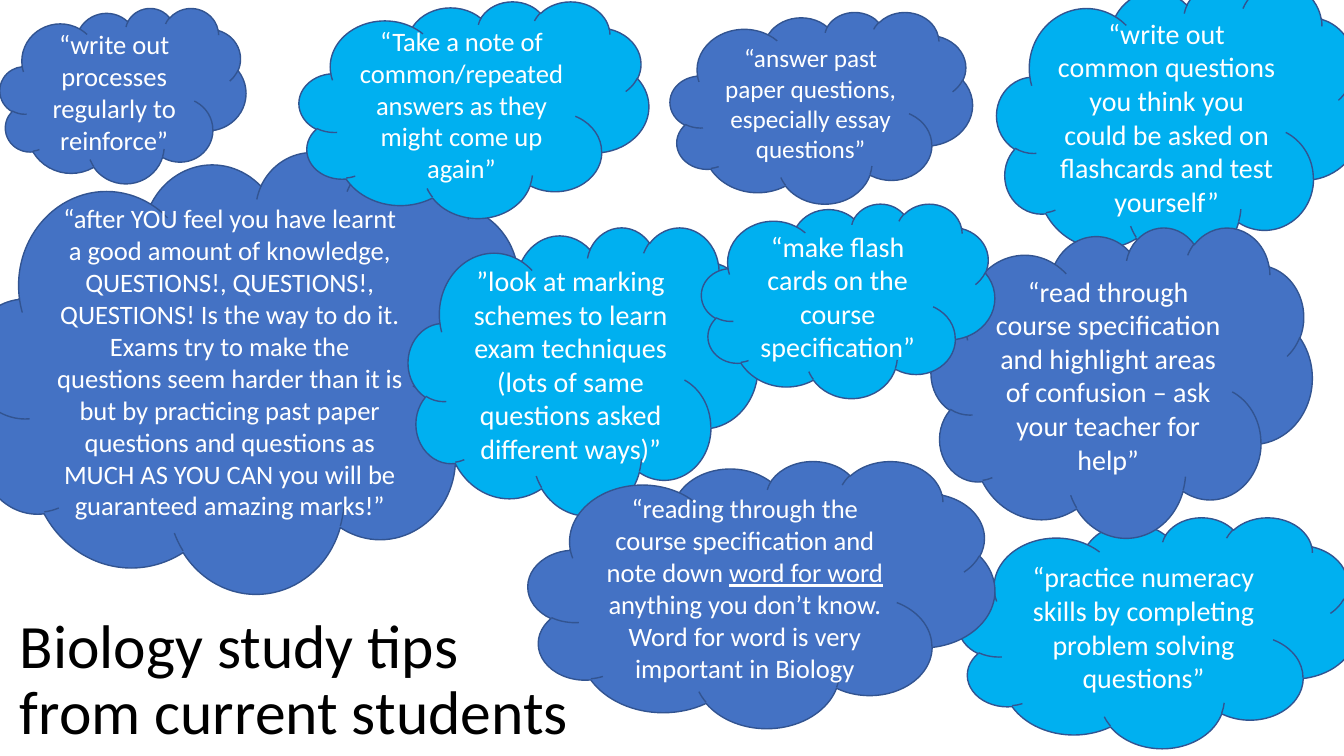
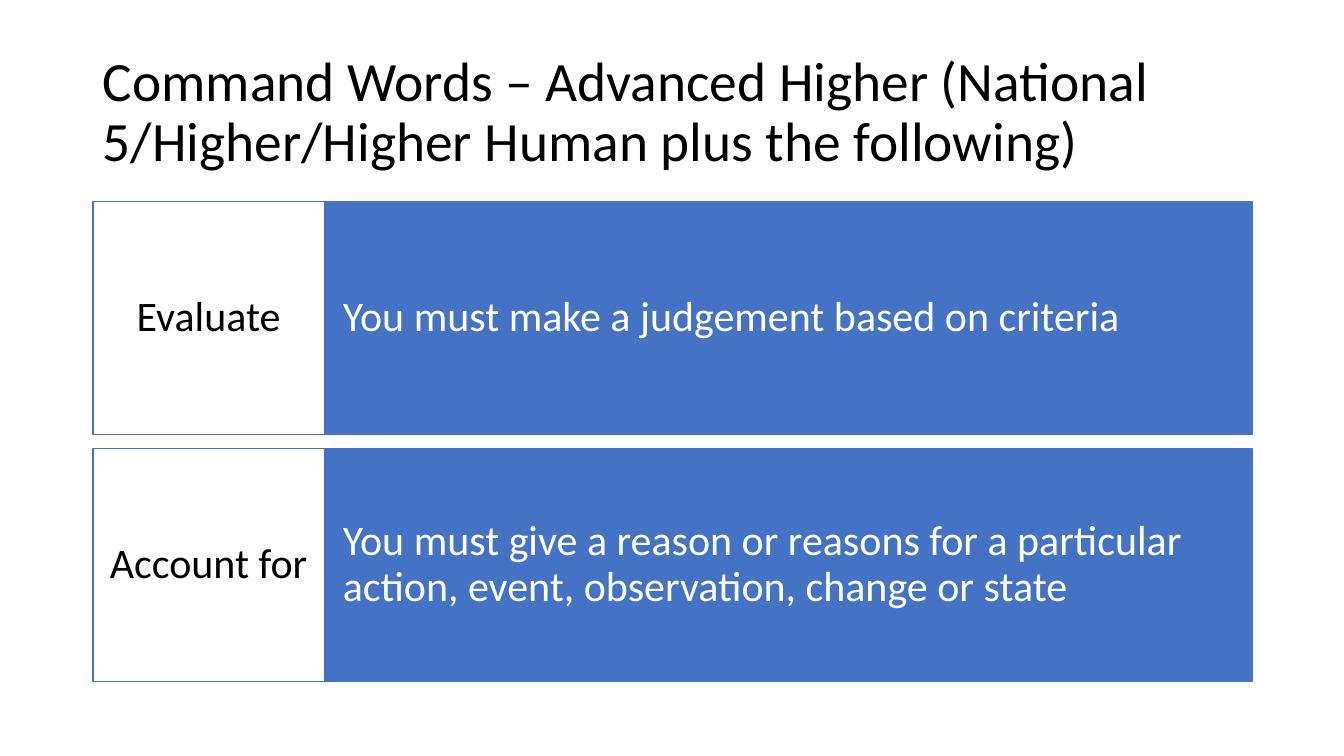
from pptx import Presentation
from pptx import util as u
from pptx.dml.color import RGBColor
from pptx.enum import shapes, text

Cm = u.Cm
FONT = "Calibri"
WHITE, BLACK = "FFFFFF", "000000"
BLUE, SKY, OUTLINE = "4472C4", "00B0F0", "325491"
TITLE_ONLY = 5

STUDY_TIPS = [
    ("“practice numeracy skills by completing problem solving questions”",
     (24.16, 13.03, 10.03, 5.82), SKY, 20),
    ("“after YOU feel you have learnt a good amount of knowledge, QUESTIONS!, "
     "QUESTIONS!, QUESTIONS! Is the way to do it. Exams try to make the questions "
     "seem harder than it is but by practicing past paper questions and questions "
     "as MUCH AS YOU CAN you will be guaranteed amazing marks!”",
     (-0.79, 3.81, 14.17, 11.13), BLUE, 19),
    ("”look at marking schemes to learn exam techniques (lots of same questions "
     "asked different ways)”",
     (10.29, 5.72, 8.81, 7.26), SKY, 20),
    ("“write out common questions you think you could be asked on flashcards and "
     "test yourself”",
     (25.12, -0.43, 9.22, 7.09), SKY, 20),
    ("“read through course specification and highlight areas of confusion – ask "
     "your teacher for help”",
     (23.47, 5.72, 9.6, 7.82), BLUE, 20),
    ("“Take a note of common/repeated answers as they might come up again”",
     (7.54, 0.03, 8.81, 5.46), SKY, 19),
    ("“write out processes regularly to reinforce”",
     (0, 0.2, 6.2, 4.42), BLUE, 19),
    ("“answer past paper questions, especially essay questions”",
     (16.89, 0.3, 7.62, 4.83), BLUE, 18),
    ("“reading through the course specification and note down _word for word_ "
     "anything you don’t know. Word for word is very important in Biology",
     (13.31, 11.61, 11.76, 6.73), BLUE, 19),
    ("“make flash cards on the course specification”",
     (17.68, 5.13, 7.39, 4.9), SKY, 20),
]

COMMAND_WORDS = [
    ("Evaluate", "You must make a judgement based on criteria"),
    ("Account for", "You must give a reason or reasons for a particular action, "
                    "event, observation, change or state"),
]


def colour(value):
    return RGBColor.from_string(value)


def write(frame, wording, size, ink=WHITE, align=text.PP_ALIGN.CENTER,
          spacing=1.0, insets=(0.25, 0.13)):
    frame.word_wrap = True
    frame.auto_size = text.MSO_AUTO_SIZE.NONE
    frame.vertical_anchor = text.MSO_ANCHOR.MIDDLE
    frame.margin_left = frame.margin_right = Cm(insets[0])
    frame.margin_top = frame.margin_bottom = Cm(insets[1])
    paragraph = frame.paragraphs[0]
    paragraph.alignment = align
    paragraph.line_spacing = spacing
    for position, part in enumerate(wording.split("_")):
        run = paragraph.add_run()
        run.text = part
        run.font.name = FONT
        run.font.size = u.Pt(size)
        run.font.color.rgb = colour(ink)
        if position % 2:
            run.font.underline = True


def add_titled_slide(deck, wording, box, size):
    slide = deck.slides.add_slide(deck.slide_layouts[TITLE_ONLY])
    title = slide.shapes.title
    title.left, title.top, title.width, title.height = map(Cm, box)
    write(title.text_frame, wording, size, ink=BLACK,
          align=text.PP_ALIGN.LEFT, spacing=0.9)
    return slide


def add_panel(slide, preset, box, fill, outline, wording, size, **text_format):
    panel = slide.shapes.add_shape(preset, *map(Cm, box))
    panel.shadow.inherit = False
    panel.fill.solid()
    panel.fill.fore_color.rgb = colour(fill)
    panel.line.color.rgb = colour(outline)
    panel.line.width = u.Pt(1)
    write(panel.text_frame, wording, size, **text_format)


def add_command_row(slide, top, word, meaning):
    left, label_width, meaning_width, height = 2.34, 5.84, 23.37, 5.87
    rectangle = shapes.MSO_SHAPE.RECTANGLE
    add_panel(slide, rectangle, (left + label_width, top, meaning_width, height),
              BLUE, BLUE, meaning, 30, align=text.PP_ALIGN.LEFT,
              spacing=0.9, insets=(0.46, 1.5))
    add_panel(slide, rectangle, (left, top, label_width, height),
              WHITE, BLUE, word, 30, ink=BLACK, spacing=0.9, insets=(0.3, 0.58))


def build_study_tips(deck):
    slide = add_titled_slide(deck, "Biology study tips from current students",
                             (0.25, 10.97, 14.48, 12.4), 44)
    for tip, box, fill, size in STUDY_TIPS:
        add_panel(slide, shapes.MSO_SHAPE.CLOUD, box, fill, OUTLINE, tip, size)


def build_command_words(deck):
    slide = add_titled_slide(
        deck,
        "Command Words – Advanced Higher (National 5/Higher/Higher Human plus the following)",
        (2.34, 1.02, 29.21, 3.68), 39.6)
    first_top, pitch = 5.08, 6.22
    for row, (word, meaning) in enumerate(COMMAND_WORDS):
        add_command_row(slide, first_top + row * pitch, word, meaning)


def main():
    deck = Presentation()
    deck.slide_width, deck.slide_height = Cm(33.87), Cm(19.05)
    build_study_tips(deck)
    build_command_words(deck)
    deck.save("out.pptx")


if __name__ == "__main__":
    main()
